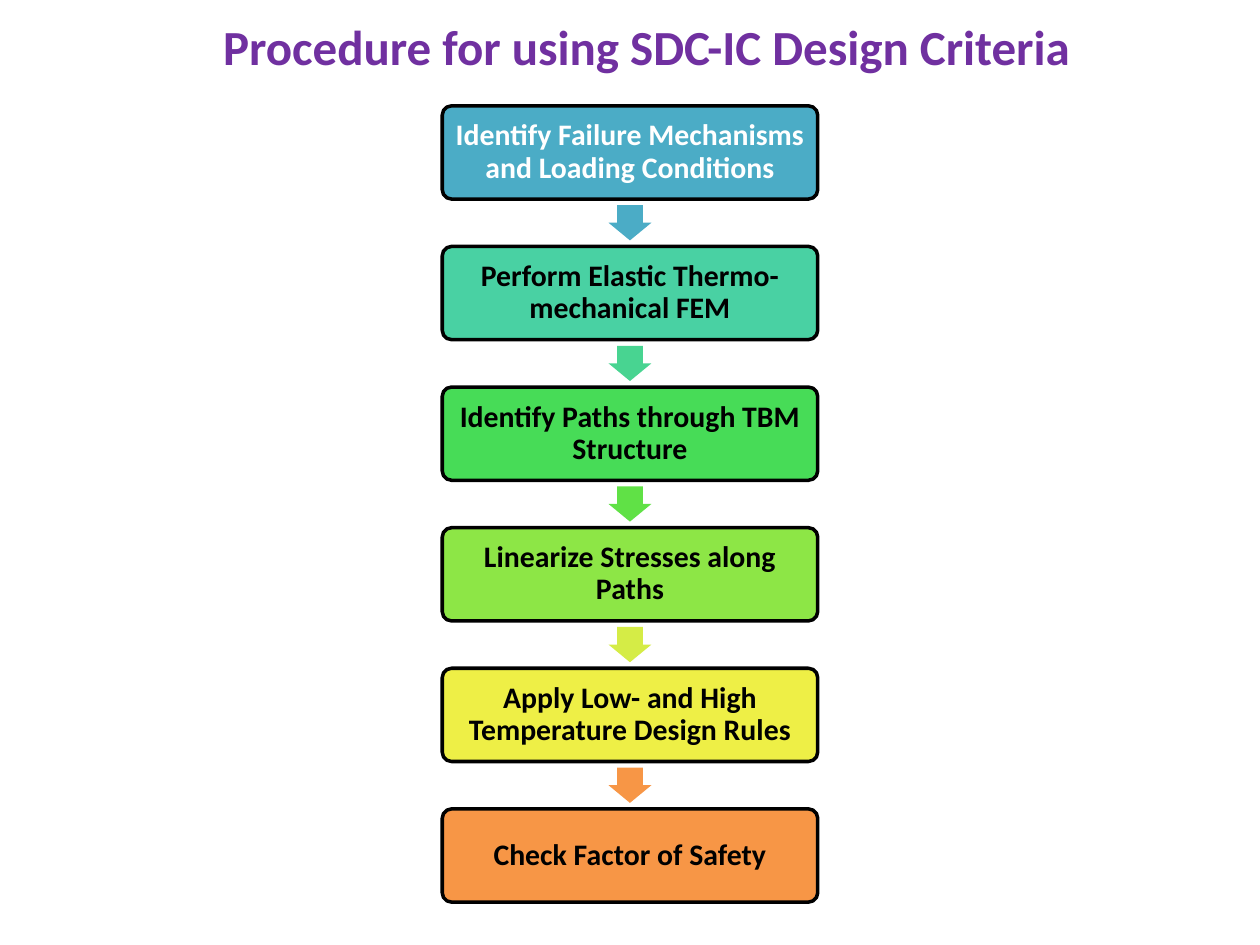
import pptx
from pptx.dml.color import RGBColor
from pptx.enum.shapes import MSO_SHAPE
from pptx.enum.text import MSO_ANCHOR, MSO_AUTO_SIZE, PP_ALIGN
from pptx.util import Inches, Pt

FONT = "Calibri"
COLORS = {"title": "7030A0", "outline": "000000", "light": "FFFFFF", "dark": "000000"}
# Step text, text colour, box fill
STEPS = [
    ("Identify Failure Mechanisms and Loading Conditions", "light", "4BACC6"),
    ("Perform Elastic Thermo-mechanical FEM", "dark", "49D1A3"),
    ("Identify Paths through TBM Structure", "dark", "47DC57"),
    ("Linearize Stresses along Paths", "dark", "8DE646"),
    ("Apply Low- and High Temperature Design Rules", "dark", "EEEF46"),
    ("Check Factor of Safety", "dark", "F79646"),
]
ARROW_FILLS = ["4BACC6", "48D491", "60E146", "D5EC46", "F79646"]
STEP_HEIGHT = Inches(0.74)
ARROW_WIDTH, ARROW_HEIGHT = Inches(0.34), Inches(0.28)


def add_run(paragraph, text, size, color):
    run = paragraph.add_run()
    run.text = text
    run.font.name = FONT
    run.font.size = Pt(size)
    run.font.bold = True
    run.font.color.rgb = RGBColor.from_string(color)


def add_filled(slide, preset, box, fill):
    shape = slide.shapes.add_shape(preset, *box)
    shape.shadow.inherit = False
    shape.fill.solid()
    shape.fill.fore_color.rgb = RGBColor.from_string(fill)
    return shape


def set_title(slide, left, top, width, height):
    title = slide.shapes.title
    title.left, title.top, title.width, title.height = left, top, width, height
    frame = title.text_frame
    frame.auto_size = MSO_AUTO_SIZE.NONE
    frame.vertical_anchor = MSO_ANCHOR.TOP
    paragraph = frame.paragraphs[0]
    paragraph.alignment = PP_ALIGN.LEFT
    add_run(paragraph, "Procedure for using SDC-IC Design Criteria", 28, COLORS["title"])


def add_step(slide, box, text, text_color, fill):
    step = add_filled(slide, MSO_SHAPE.ROUNDED_RECTANGLE, box, fill)
    step.adjustments[0] = 0.1
    step.line.color.rgb = RGBColor.from_string(COLORS["outline"])
    step.line.width = Pt(2)
    frame = step.text_frame
    frame.word_wrap = True
    frame.vertical_anchor = MSO_ANCHOR.MIDDLE
    frame.margin_left = frame.margin_right = Inches(0.05)
    frame.margin_top = frame.margin_bottom = Inches(0.05)
    paragraph = frame.paragraphs[0]
    paragraph.alignment = PP_ALIGN.CENTER
    paragraph.line_spacing = 0.9
    add_run(paragraph, text, 17, COLORS[text_color])


def add_arrow(slide, box, fill):
    arrow = add_filled(slide, MSO_SHAPE.DOWN_ARROW, box, fill)
    arrow.adjustments[0] = 0.6
    arrow.adjustments[1] = 0.5
    arrow.line.fill.background()


def add_procedure(slide, left, top, width, height):
    """Spread the steps evenly down the box, with an arrow centred in each gap."""
    pitch = (height - STEP_HEIGHT) // (len(STEPS) - 1)
    gap = pitch - STEP_HEIGHT
    for i, (text, text_color, fill) in enumerate(STEPS):
        step_top = top + i * pitch
        add_step(slide, (left, step_top, width, STEP_HEIGHT), text, text_color, fill)
        if i < len(ARROW_FILLS):
            arrow_left = left + (width - ARROW_WIDTH) // 2
            arrow_top = step_top + STEP_HEIGHT + (gap - ARROW_HEIGHT) // 2
            add_arrow(slide, (arrow_left, arrow_top, ARROW_WIDTH, ARROW_HEIGHT), ARROW_FILLS[i])


def main():
    deck = pptx.Presentation()
    deck.slide_width, deck.slide_height = Inches(10), Inches(7.5)
    slide = deck.slides.add_slide(deck.slide_layouts.get_by_name("Title Only"))
    set_title(slide, Inches(1.67), Inches(0.08), Inches(7.03), Inches(0.57))
    add_procedure(slide, Inches(3.51), Inches(0.84), Inches(2.98), Inches(6.32))
    deck.save("out.pptx")


if __name__ == "__main__":
    main()
